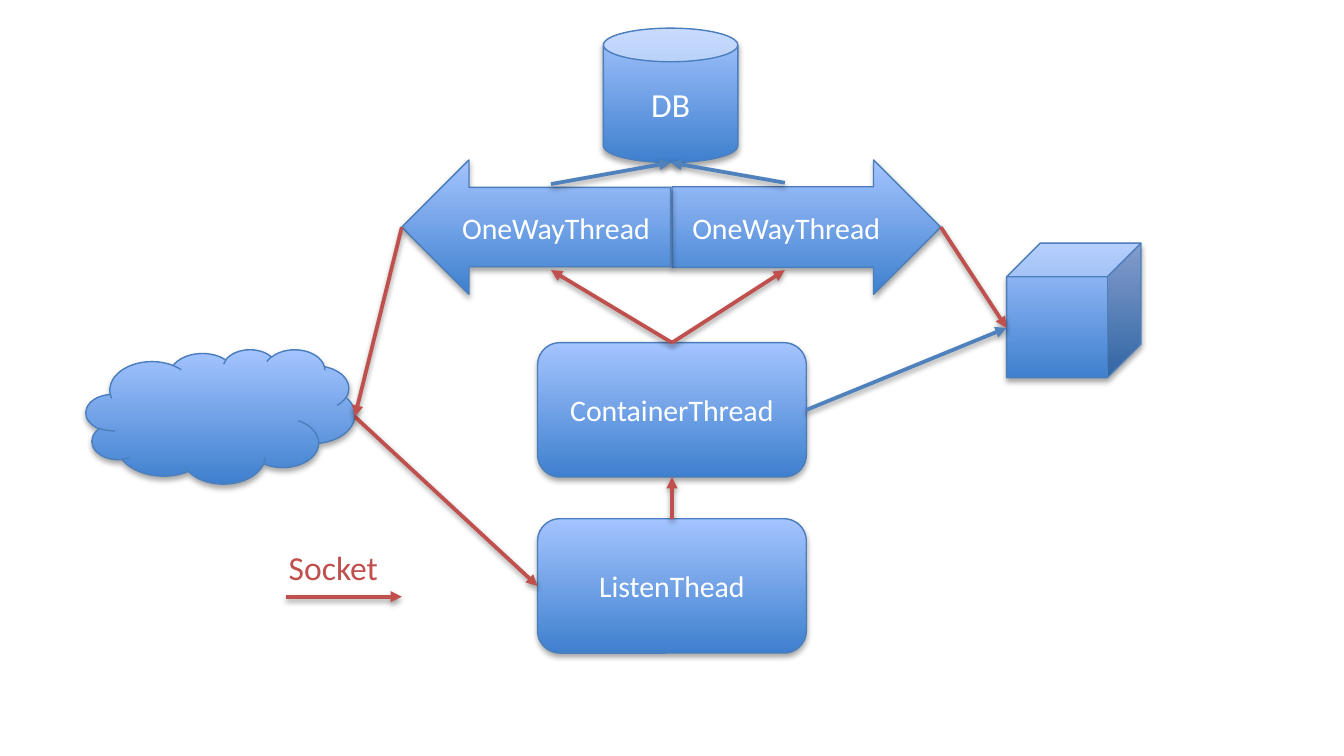
from lxml import etree
from pptx import Presentation
from pptx.dml.color import RGBColor
from pptx.enum.shapes import MSO_CONNECTOR, MSO_SHAPE
from pptx.enum.text import MSO_ANCHOR, PP_ALIGN
from pptx.oxml import parse_xml
from pptx.oxml.ns import qn
from pptx.util import Inches, Pt

STRAIGHT = MSO_CONNECTOR.STRAIGHT
CUBE, CLOUD, CAN = MSO_SHAPE.CUBE, MSO_SHAPE.CLOUD, MSO_SHAPE.CAN
ROUNDED, BLOCK_ARROW = MSO_SHAPE.ROUNDED_RECTANGLE, MSO_SHAPE.RIGHT_ARROW
CENTER, MIDDLE = PP_ALIGN.CENTER, MSO_ANCHOR.MIDDLE
FONT = "Calibri"
SOCKET_RED, CALL_BLUE, OUTLINE = "C0504D", "4F81BD", "4B7EBC"
GRADIENT = ("3F80CE", "A4C4FF")
WHITE = "FFFFFF"
A_NS = "http://schemas.openxmlformats.org/drawingml/2006/main"


def color(hex_code):
    return RGBColor.from_string(hex_code)


def add_shadow(item, distance, opacity):
    """Soft black shadow straight below; distance in points, opacity in percent."""
    item._element.spPr.append(parse_xml(
        f'<a:effectLst xmlns:a="{A_NS}">'
        f'<a:outerShdw blurRad="{Pt(3.1)}" dist="{Pt(distance)}" dir="5400000" rotWithShape="0">'
        f'<a:srgbClr val="000000"><a:alpha val="{opacity * 1000}"/></a:srgbClr>'
        '</a:outerShdw></a:effectLst>'))


def write_label(frame, text, size, hex_code):
    frame.text = text
    font = frame.paragraphs[0].runs[0].font
    font.name, font.size = FONT, Pt(size)
    font.color.rgb = color(hex_code)


def add_node(slide, kind, box, text="", size=16):
    node = slide.shapes.add_shape(kind, *map(Inches, box))
    node.fill.gradient()
    node.fill.gradient_angle = 90
    for stop, hex_code in zip(node.fill.gradient_stops, GRADIENT):
        stop.color.rgb = color(hex_code)
    node.line.color.rgb = color(OUTLINE)
    node.line.width = Pt(0.75)
    add_shadow(node, 1.8, 35)
    if text:
        write_label(node.text_frame, text, size, WHITE)
        node.text_frame.word_wrap = True
        node.text_frame.vertical_anchor = MIDDLE
        node.text_frame.paragraphs[0].alignment = CENTER
    return node


def add_arrow(slide, start, end, hex_code):
    arrow = slide.shapes.add_connector(STRAIGHT, *map(Inches, (*start, *end)))
    arrow.line.color.rgb = color(hex_code)
    arrow.line.width = Pt(2)
    etree.SubElement(arrow.line._get_or_add_ln(), qn("a:tailEnd"), type="triangle")
    add_shadow(arrow, 1.6, 38)


def add_one_way_threads(slide, left, top):
    """Two block arrows, back to back, pointing right and left."""
    for offset, shaft, flipped in ((2.01, 0.6, False), (0, 0.59, True)):
        thread = add_node(slide, BLOCK_ARROW, (left + offset, top, 2, 1), "OneWayThread")
        thread.adjustments[0] = shaft
        if flipped:
            thread._element.spPr.find(qn("a:xfrm")).set("flipH", "1")


def add_legend(slide, left, top):
    add_arrow(slide, (left + 0.08, top + 0.42), (left + 0.94, top + 0.42), SOCKET_RED)
    legend = slide.shapes.add_textbox(*map(Inches, (left, top, 1.03, 0.4)))
    legend.text_frame.word_wrap = True
    write_label(legend.text_frame, "Socket", 18, SOCKET_RED)


def add_socket_links(slide, cloud_right, cube_left):
    container_top = (5, 2.55)
    for start, end in (
        (cloud_right, (4, 4.36)),
        ((5, 3.86), (5, 3.55)),
        (container_top, (4.1, 2.01)),
        (container_top, (5.84, 2.01)),
        ((2.99, 1.69), cloud_right),
        ((7, 1.69), cube_left),
    ):
        add_arrow(slide, start, end, SOCKET_RED)


def add_call_links(slide, db_bottom, cube_left):
    for start, end in (
        ((4.1, 1.37), db_bottom),
        ((5.84, 1.36), db_bottom),
        ((6, 3.05), cube_left),
    ):
        add_arrow(slide, start, end, CALL_BLUE)


def main():
    deck = Presentation()
    deck.slide_width = Inches(10)
    deck.slide_height = deck.slide_width * 9 // 16
    slide = deck.slides.add_slide(deck.slide_layouts[6])
    cube_left = (7.49, 2.44)
    add_node(slide, CUBE, (7.49, 1.81, 1, 1))
    add_node(slide, ROUNDED, (4, 2.55, 2, 1), "ContainerThread")
    add_node(slide, ROUNDED, (4, 3.86, 2, 1), "ListenThead")
    add_one_way_threads(slide, 2.99, 1.19)
    add_node(slide, CLOUD, (0.64, 2.6, 2, 1))
    add_socket_links(slide, (2.64, 3.1), cube_left)
    add_node(slide, CAN, (4.49, 0.21, 1, 1), "DB", 18)
    add_call_links(slide, (4.99, 1.21), cube_left)
    add_legend(slide, 2.05, 4.02)
    deck.save("out.pptx")


if __name__ == "__main__":
    main()
